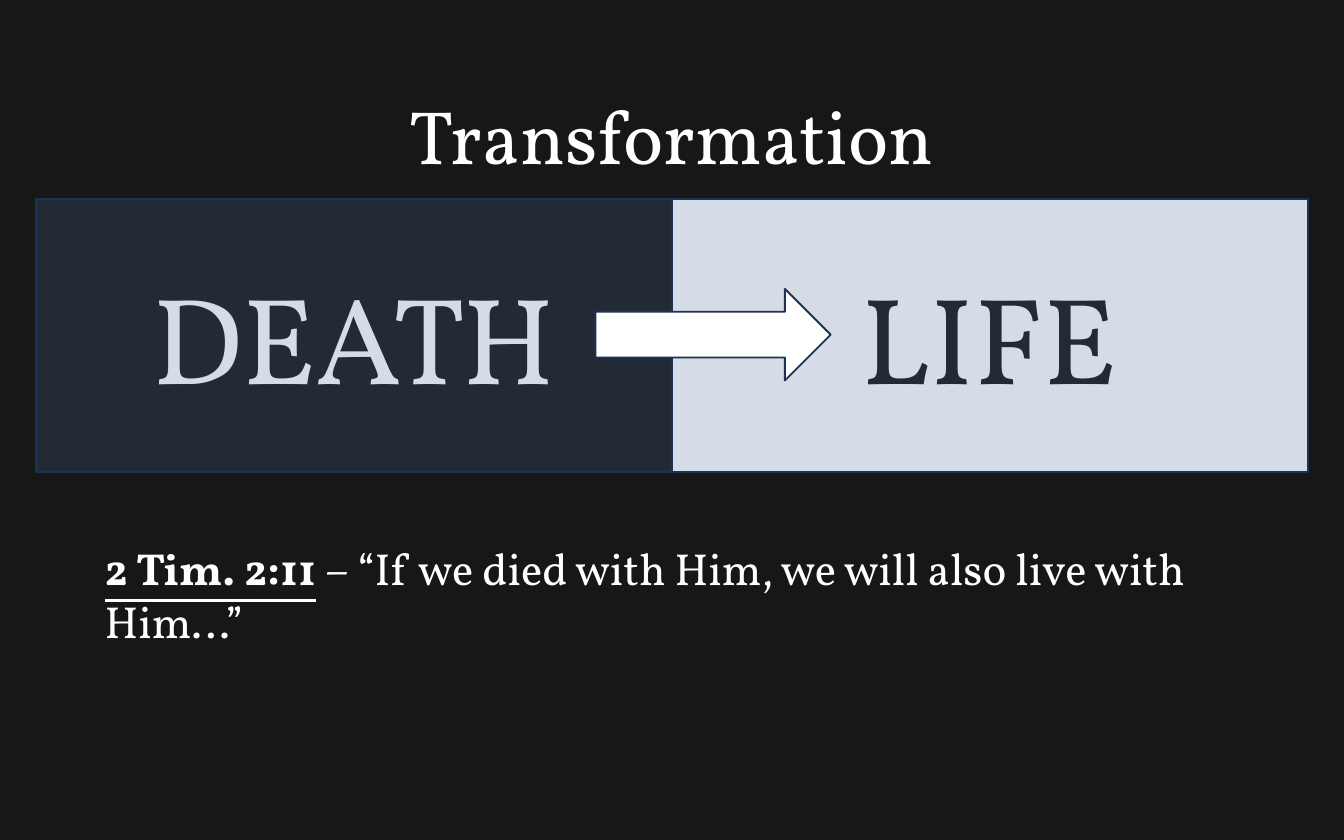
from pptx import Presentation
from pptx import util as u
from pptx.dml.color import RGBColor
from pptx.enum import shapes, text

SLIDE_WIDTH, SLIDE_HEIGHT = 720, 450
THEME = {
    "font": "Vollkorn",
    "background": "181717",
    "dark": "222A35",
    "light": "D6DCE5",
    "white": "FFFFFF",
    "outline": "1E3256",
    "title_size": 40.5,
    "state_size": 66,
    "verse_size": 24,
}

TITLE = "Transformation"
STATES = [("DEATH", "dark", "light"), ("LIFE", "light", "dark")]
VERSE = [
    ("2 Tim. 2:11", True),
    (" – “If we died with Him, we will also live with Him…”", False),
]

MARGIN = 19.44
BAND_TOP, BAND_HEIGHT = 106.56, 146.16
STATE_WIDTH = SLIDE_WIDTH / 2 - MARGIN
TITLE_BOX = (136.08, 43.92, 447.84, 56.16)
ARROW_BOX = (319, 154.8, 126, 49)
VERSE_BOX = (48.96, 285.84, 632.16, 65.52)


def color(name):
    return RGBColor.from_string(THEME[name])


def points(box):
    return [u.Pt(length) for length in box]


def write(paragraph, words, size, ink="white", align=text.PP_ALIGN.CENTER, strong=False):
    paragraph.alignment = align
    run = paragraph.add_run()
    run.text = words
    font = run.font
    font.name = THEME["font"]
    font.size = u.Pt(THEME[size])
    font.color.rgb = color(ink)
    font.bold = strong
    font.underline = strong


def add_block(slide, kind, box, fill):
    block = slide.shapes.add_shape(kind, *points(box))
    block.shadow.inherit = False
    block.fill.solid()
    block.fill.fore_color.rgb = color(fill)
    block.line.color.rgb = color("outline")
    block.line.width = u.Pt(1)
    return block


def main():
    deck = Presentation()
    deck.slide_width, deck.slide_height = points((SLIDE_WIDTH, SLIDE_HEIGHT))
    slide = deck.slides.add_slide(deck.slide_layouts[5])
    slide.background.fill.solid()
    slide.background.fill.fore_color.rgb = color("background")

    title = slide.shapes.title
    title.left, title.top, title.width, title.height = points(TITLE_BOX)
    title.text_frame.auto_size = text.MSO_AUTO_SIZE.SHAPE_TO_FIT_TEXT
    title.text_frame.vertical_anchor = text.MSO_ANCHOR.TOP
    write(title.text_frame.paragraphs[0], TITLE, "title_size")

    for column, (word, fill, ink) in enumerate(STATES):
        box = (MARGIN + column * STATE_WIDTH, BAND_TOP, STATE_WIDTH, BAND_HEIGHT)
        state = add_block(slide, shapes.MSO_SHAPE.RECTANGLE, box, fill)
        state.text_frame.vertical_anchor = text.MSO_ANCHOR.MIDDLE
        write(state.text_frame.paragraphs[0], word, "state_size", ink=ink)

    add_block(slide, shapes.MSO_SHAPE.RIGHT_ARROW, ARROW_BOX, "white")

    verse = slide.shapes.add_textbox(*points(VERSE_BOX)).text_frame
    verse.word_wrap = True
    verse.auto_size = text.MSO_AUTO_SIZE.SHAPE_TO_FIT_TEXT
    for words, strong in VERSE:
        write(verse.paragraphs[0], words, "verse_size", align=text.PP_ALIGN.LEFT, strong=strong)

    deck.save("out.pptx")


if __name__ == "__main__":
    main()
